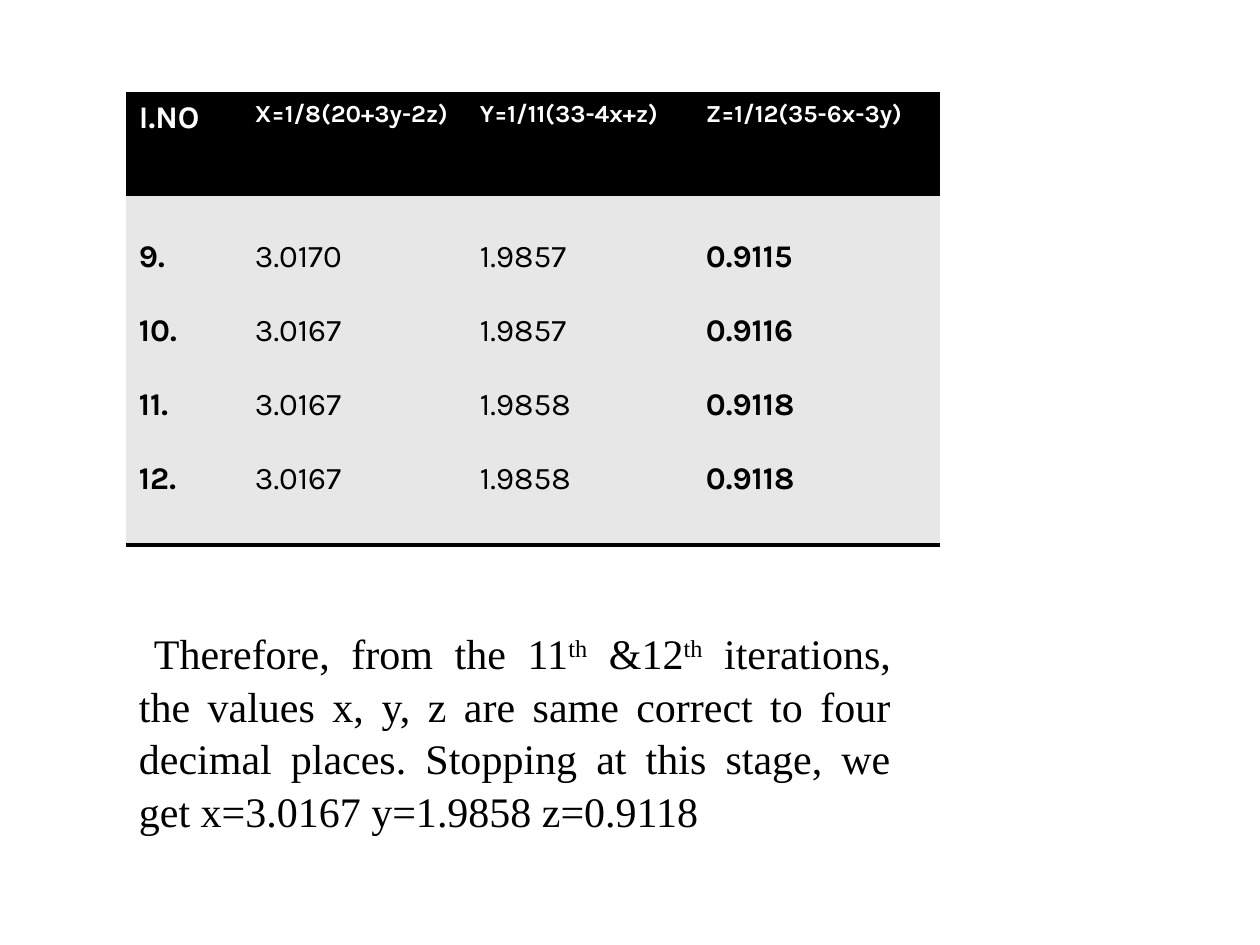
from dataclasses import dataclass
from typing import Any

from lxml import etree
from pptx import Presentation
from pptx import util as u
from pptx.dml import color
from pptx.enum import text
from pptx.oxml import ns

PX = 914400 / 126
COLORS = {"black": "000000", "white": "FFFFFF", "body": "E7E7E7"}
NO_STYLE = "{2D5ABB26-0587-4C30-8999-92F81FD0307C}"


@dataclass(frozen=True)
class Column:
    heading: str
    width: int
    values: tuple[str, ...]
    bold: bool = False
    heading_size: int = 14


COLUMNS = (
    Column("I.NO", 116, ("9.", "10.", "11.", "12."), True, 18),
    Column("X=1/8(20+3y-2z)", 225, ("3.0170", "3.0167", "3.0167", "3.0167")),
    Column("Y=1/11(33-4x+z)", 226, ("1.9857", "1.9857", "1.9858", "1.9858")),
    Column("Z=1/12(35-6x-3y)", 247, ("0.9115", "0.9116", "0.9118", "0.9118"), True),
)
ROW_HEIGHTS = (102, 349)
CONCLUSION = (
    ("Therefore, from the 11", False),
    ("th", True),
    (" &12", False),
    ("th", True),
    (" iterations, the values x, y, z are same correct to four decimal places. "
     "Stopping at this stage, we get x=3.0167 y=1.9858 z=0.9118", False),
)


def px(value: int) -> u.Emu:
    return u.Emu(round(value * PX))


def apply(target: Any, values: dict[str, Any]) -> None:
    for name, value in values.items():
        setattr(target, name, value)


def add_run(p: Any, wording: str, size: int, name: str = "Karla",
            bold: bool = False, fill: str = "black") -> Any:
    r = p.add_run()
    r.text = wording
    apply(r.font, {"size": u.Pt(size), "name": name, "bold": bold})
    r.font.color.rgb = color.RGBColor.from_string(COLORS[fill])
    return r


def add_border(cell: Any, side: str) -> None:
    ln = etree.SubElement(cell._tc.get_or_add_tcPr(), ns.qn(f"a:{side}"), w=str(u.Pt(2)))
    fill = etree.SubElement(ln, ns.qn("a:solidFill"))
    etree.SubElement(fill, ns.qn("a:srgbClr"), val=COLORS["black"])


def fill_cell(cell: Any, lines: tuple[str, ...], size: int, bold: bool,
              ink: str, back: str, side: str, top: int) -> None:
    add_border(cell, side)
    cell.fill.solid()
    cell.fill.fore_color.rgb = color.RGBColor.from_string(COLORS[back])
    apply(cell, {"margin_left": px(13), "margin_right": px(13),
                 "margin_top": px(top), "margin_bottom": px(6)})
    tf = cell.text_frame
    for index, line in enumerate(lines):
        p = tf.add_paragraph() if index else tf.paragraphs[0]
        if index:
            p.space_before = u.Pt(21)
        add_run(p, line, size, bold=bold, fill=ink)


def add_iterations(s: Any) -> None:
    frame = s.shapes.add_table(2, len(COLUMNS), px(126), px(94),
                               px(sum(c.width for c in COLUMNS)), px(sum(ROW_HEIGHTS)))
    table = frame.table
    table._tbl.tblPr.find(ns.qn("a:tableStyleId")).text = NO_STYLE
    for row, height in zip(table.rows, ROW_HEIGHTS):
        row.height = px(height)
    for index, column in enumerate(COLUMNS):
        table.columns[index].width = px(column.width)
        fill_cell(table.cell(0, index), (column.heading,), column.heading_size,
                  True, "white", "black", "lnT", 6)
        fill_cell(table.cell(1, index), column.values, 18,
                  column.bold, "black", "body", "lnB", 43)


def add_conclusion(s: Any) -> None:
    tf = s.shapes.add_textbox(px(126), px(620), px(819), px(217)).text_frame
    apply(tf, {"word_wrap": True, "margin_left": px(13), "margin_right": px(54),
               "margin_top": px(6), "margin_bottom": px(6)})
    p = tf.paragraphs[0]
    apply(p, {"alignment": text.PP_ALIGN.JUSTIFY, "line_spacing": 1.04})
    p._p.get_or_add_pPr().set("indent", str(px(15)))
    for wording, raised in CONCLUSION:
        r = add_run(p, wording, 24, "Times New Roman")
        if raised:
            r.font._element.set("baseline", "30000")


def main() -> None:
    prs = Presentation()
    apply(prs, {"slide_width": px(1260), "slide_height": px(945)})
    s = prs.slides.add_slide(prs.slide_layouts[6])
    add_iterations(s)
    add_conclusion(s)
    prs.save("out.pptx")


if __name__ == "__main__":
    main()
